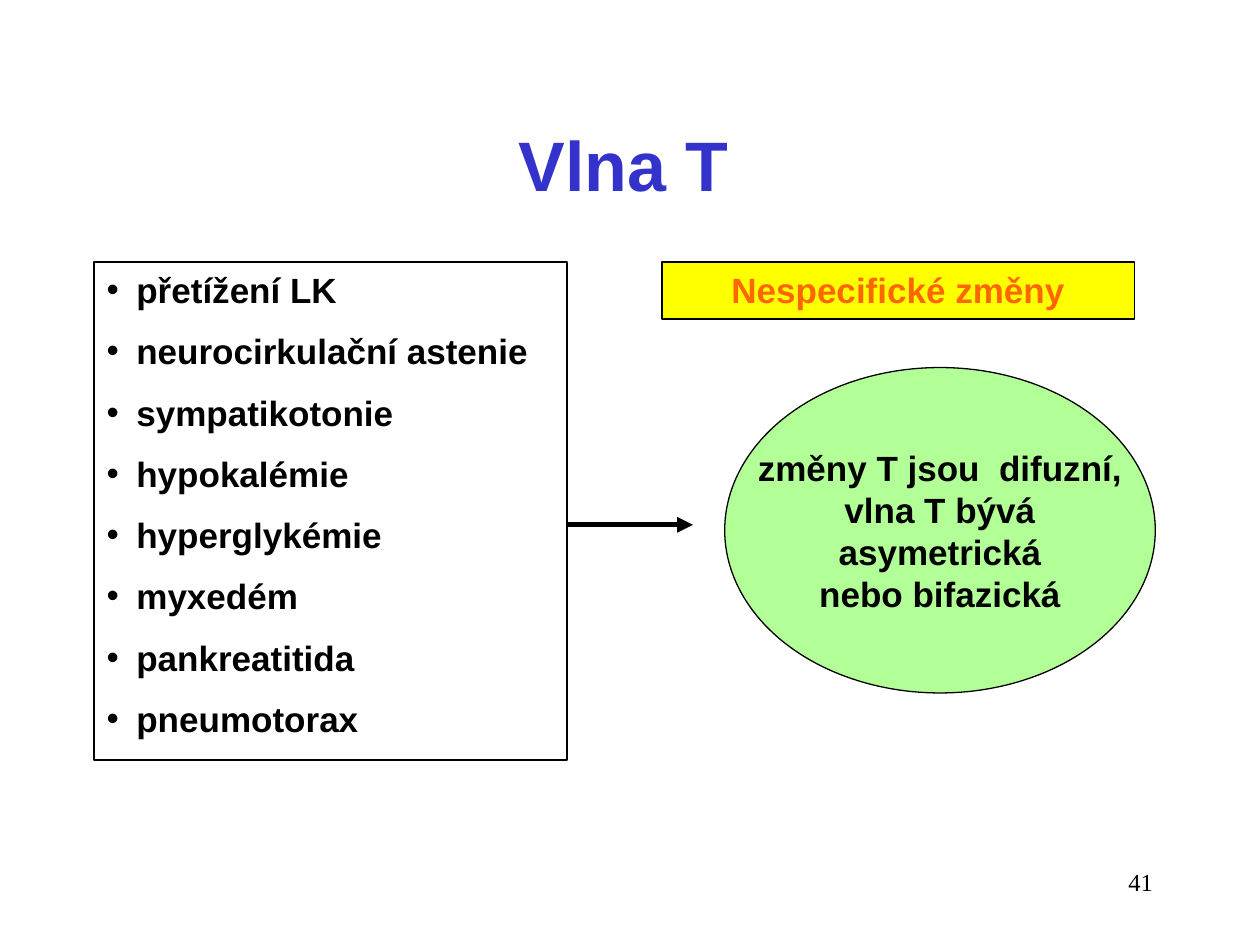
from pptx import Presentation
from pptx import util as u
from pptx.dml.color import RGBColor
from pptx.enum import shapes, text
from pptx.oxml import ns, xmlchemy

Cm, Pt = u.Cm, u.Pt
COLORS = {
    "black": "000000",
    "white": "FFFFFF",
    "title": "3333CC",
    "green": "66FF33",
    "yellow": "FFFF00",
    "orange": "FF6600",
}
CAUSES = [
    "přetížení LK", "neurocirkulační astenie", "sympatikotonie", "hypokalémie",
    "hyperglykémie", "myxedém", "pankreatitida", "pneumotorax",
]
FINDINGS = ["změny T jsou  difuzní,", "vlna T bývá", "asymetrická", "nebo bifazická"]


def color(name):
    return RGBColor.from_string(COLORS[name])


def add_child(parent, tag, **attributes):
    child = xmlchemy.OxmlElement(tag)
    for key, value in attributes.items():
        child.set(key, value)
    parent.append(child)
    return child


def write(frame, lines, ink="black", size=20, align=text.PP_ALIGN.CENTER,
          font="Arial", bold=True, gap=0, bullet=False):
    """Fill a text frame with one paragraph per line."""
    frame.text = "\n".join(lines)
    for index, para in enumerate(frame.paragraphs):
        para.alignment = align
        para.space_before = Pt(gap if index else 0)
        if bullet:
            props = para._p.get_or_add_pPr()
            props.set("marL", str(Cm(0.6)))
            props.set("indent", str(-Cm(0.6)))
            add_child(props, "a:buFont", typeface="Arial")
            add_child(props, "a:buChar", char="•")
        para.font.name = font
        para.font.size = Pt(size)
        para.font.bold = bold
        para.font.color.rgb = color(ink)


def add_panel(page, kind, box, fill, line_width, translucent=False):
    panel = page.shapes.add_shape(kind, *map(Cm, box))
    panel.shadow.inherit = False
    panel.fill.solid()
    panel.fill.fore_color.rgb = color(fill)
    if translucent:
        shade = panel.fill._xPr.find(".//" + ns.qn("a:srgbClr"))
        add_child(shade, "a:alpha", val="50000")
    panel.line.color.rgb = color("black")
    panel.line.width = Pt(line_width)
    frame = panel.text_frame
    frame.word_wrap = True
    frame.vertical_anchor = text.MSO_ANCHOR.TOP
    return frame


def set_title(page, box):
    title = page.shapes.title
    title.left, title.top, title.width, title.height = map(Cm, box)
    frame = title.text_frame
    frame.word_wrap = False
    frame.auto_size = text.MSO_AUTO_SIZE.NONE
    frame.vertical_anchor = text.MSO_ANCHOR.TOP
    write(frame, ["Vlna T"], ink="title", size=40)


def add_causes(page, box):
    frame = add_panel(page, shapes.MSO_SHAPE.RECTANGLE, box, "white", 1, translucent=True)
    write(frame, CAUSES, align=text.PP_ALIGN.LEFT, gap=11, bullet=True)


def add_arrow(page, left, top, length):
    arrow = page.shapes.add_connector(
        shapes.MSO_CONNECTOR.STRAIGHT, Cm(left), Cm(top), Cm(left + length), Cm(top))
    arrow.line.color.rgb = color("black")
    arrow.line.width = Pt(3)
    add_child(arrow.line._get_or_add_ln(), "a:tailEnd", type="triangle")
    add_child(arrow._element.spPr, "a:effectLst")


def add_findings(page, box):
    frame = add_panel(page, shapes.MSO_SHAPE.OVAL, box, "green", 0.75, translucent=True)
    frame.word_wrap = False
    frame.vertical_anchor = text.MSO_ANCHOR.MIDDLE
    write(frame, FINDINGS)


def add_heading(page, box):
    frame = add_panel(page, shapes.MSO_SHAPE.RECTANGLE, box, "yellow", 1)
    write(frame, ["Nespecifické změny"], ink="orange")


def add_page_number(page, box):
    frame = page.shapes.add_textbox(*map(Cm, box)).text_frame
    frame.word_wrap = True
    write(frame, ["41"], size=14, align=text.PP_ALIGN.RIGHT,
          font="Times New Roman", bold=False)


def main():
    deck = Presentation()
    deck.slide_width, deck.slide_height = Cm(25.4), Cm(19.05)
    page = deck.slides.add_slide(deck.slide_layouts[5])

    left, top, column = 1.9, 5.29, 9.53
    add_page_number(page, (18.2, 17.36, 5.29, 1.27))
    set_title(page, (10.19, 2.32, 4.75, 1.95))
    add_causes(page, (left, top, column, 10.03))
    add_arrow(page, left + column, 10.58, 2.54)
    add_findings(page, (14.61, 7.41, 8.68, 6.56))
    add_heading(page, (13.34, top, column, 1.14))
    deck.save("out.pptx")


if __name__ == "__main__":
    main()
